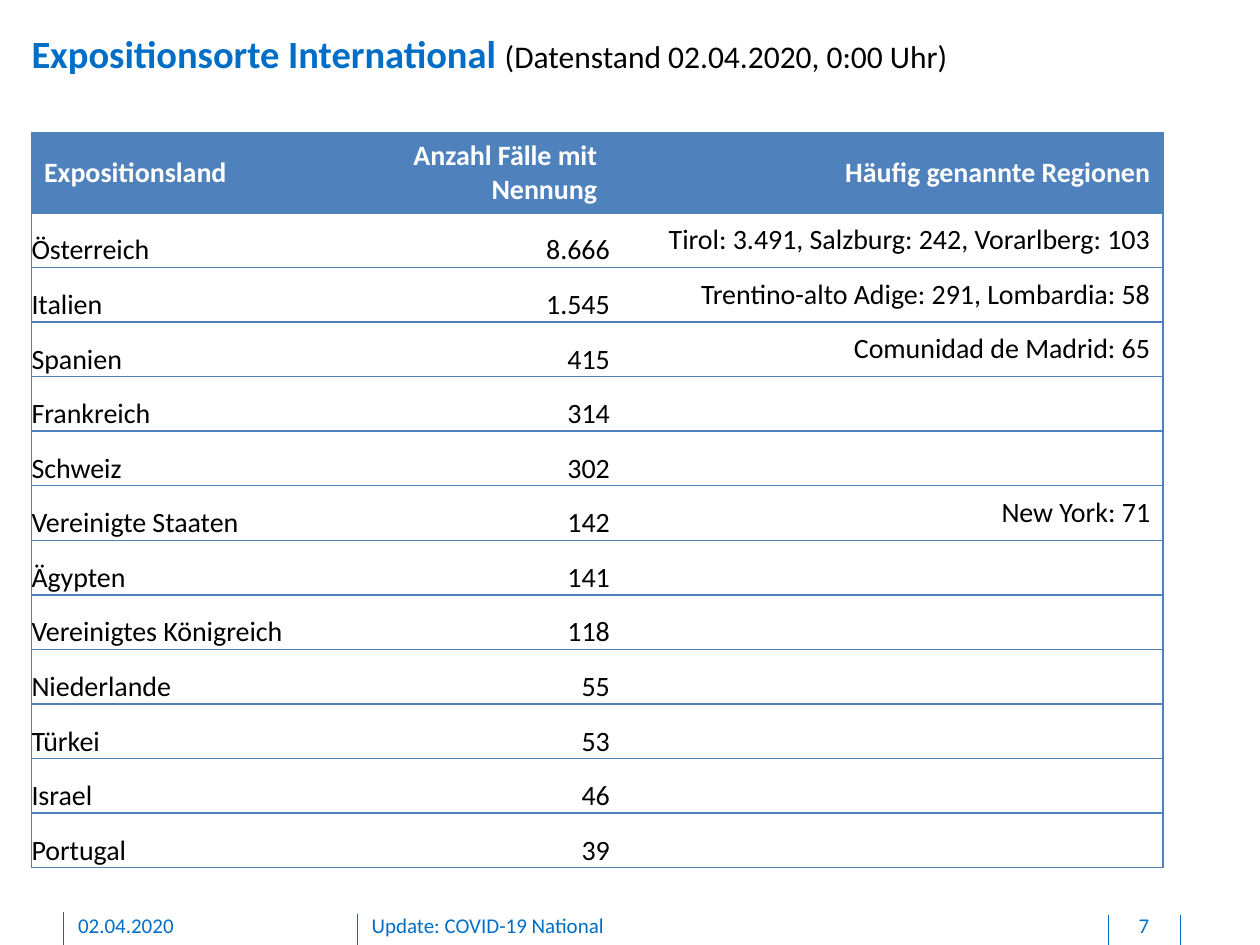
import pptx
import pptx.util
import pptx.dml.color
import pptx.enum.text
import pptx.enum.shapes
import pptx.oxml.ns
from lxml import etree

Inches = pptx.util.Inches
Pt = pptx.util.Pt
RGBColor = pptx.dml.color.RGBColor
ALIGN = pptx.enum.text.PP_ALIGN
ANCHOR = pptx.enum.text.MSO_ANCHOR
qn = pptx.oxml.ns.qn

BLUE = RGBColor(0x00, 0x6E, 0xC7)
TABLE_BLUE = RGBColor(0x4F, 0x81, 0xBD)
BLACK = RGBColor(0, 0, 0)
WHITE = RGBColor(255, 255, 255)

TITLE = "Expositionsorte International "
DATA_STATUS = "(Datenstand 02.04.2020, 0:00 Uhr)"
HEADER = ("Expositionsland", "Anzahl Fälle mit Nennung", "Häufig genannte Regionen")
COUNTRIES = [
    ("Österreich", "8.666", "Tirol: 3.491, Salzburg: 242, Vorarlberg: 103"),
    ("Italien", "1.545", "Trentino-alto Adige: 291, Lombardia: 58"),
    ("Spanien", "415", "Comunidad de Madrid: 65"),
    ("Frankreich", "314", ""),
    ("Schweiz", "302", ""),
    ("Vereinigte Staaten", "142", "New York: 71"),
    ("Ägypten", "141", ""),
    ("Vereinigtes Königreich", "118", ""),
    ("Niederlande", "55", ""),
    ("Türkei", "53", ""),
    ("Israel", "46", ""),
    ("Portugal", "39", ""),
]
FOOTERS = [
    ("02.04.2020", 0.62, 2.03, ALIGN.LEFT),
    ("Update: COVID-19 National", 2.95, 5.67, ALIGN.LEFT),
    ("7", 8.81, 0.54, ALIGN.CENTER),
]
FOOTER_LINES = [(0.5, 7.24), (2.84, 7.25), (8.8, 7.26), (9.37, 7.26)]
COLUMN_WIDTHS = (2.49, 2.1, 4.39)
TABLE_HEIGHT = 5.84
HEADER_HEIGHT = 0.64


def add_text(frame, text, size=16, color=BLACK, bold=False, align=ALIGN.LEFT):
    para = frame.paragraphs[0]
    para.alignment = align
    span = para.add_run()
    span.text = text
    span.font.name = "Calibri"
    span.font.size = Pt(size)
    span.font.bold = bold
    span.font.color.rgb = color


def add_box(page, left, top, width, height, bottom=0):
    frame = page.shapes.add_textbox(
        Inches(left), Inches(top), Inches(width), Inches(height)).text_frame
    frame.word_wrap = True
    frame.margin_left = frame.margin_top = frame.margin_right = 0
    frame.margin_bottom = Inches(bottom)
    return frame


def set_borders(cell, sides):
    properties = cell._tc.get_or_add_tcPr()
    for side in "LRTB":
        line = etree.SubElement(properties, qn(f"a:ln{side}"), w=str(Pt(1)))
        if side in sides:
            fill = etree.SubElement(line, qn("a:solidFill"))
            etree.SubElement(fill, qn("a:srgbClr"), val=str(TABLE_BLUE))
        else:
            etree.SubElement(line, qn("a:noFill"))


def add_country_table(page):
    rows = [HEADER] + COUNTRIES
    table = page.shapes.add_table(
        len(rows), len(HEADER), Inches(0.25), Inches(1.05),
        Inches(sum(COLUMN_WIDTHS)), Inches(TABLE_HEIGHT)).table
    for column, width in zip(table.columns, COLUMN_WIDTHS):
        column.width = Inches(width)
    for index, values in enumerate(rows):
        is_header = index == 0
        body_height = (TABLE_HEIGHT - HEADER_HEIGHT) / len(COUNTRIES)
        table.rows[index].height = Inches(HEADER_HEIGHT if is_header else body_height)
        for position, text in enumerate(values):
            cell = table.cell(index, position)
            set_borders(cell, ("LTB", "TB", "RTB")[position])
            cell.fill.solid()
            cell.fill.fore_color.rgb = TABLE_BLUE if is_header else WHITE
            cell.vertical_anchor = ANCHOR.MIDDLE
            if not is_header and position < 2:
                cell.vertical_anchor = ANCHOR.BOTTOM
                cell.margin_left = cell.margin_right = 0
                cell.margin_top = cell.margin_bottom = 0
            if text:
                add_text(cell.text_frame, text, bold=is_header,
                         color=WHITE if is_header else BLACK,
                         align=ALIGN.RIGHT if position else ALIGN.LEFT)


def add_footer(page):
    for left, top in FOOTER_LINES:
        line = page.shapes.add_connector(
            pptx.enum.shapes.MSO_CONNECTOR.STRAIGHT,
            Inches(left), Inches(top), Inches(left), Inches(7.5))
        line.line.color.rgb = BLUE
        line.line.width = Pt(0.5)
        etree.SubElement(line._element.spPr, qn("a:effectLst"))
    for text, left, width, align in FOOTERS:
        frame = add_box(page, left, 7.24, width, 0.21, bottom=0.05)
        add_text(frame, text, size=12, color=BLUE, align=align)


def main():
    deck = pptx.Presentation()
    deck.slide_width = Inches(10)
    deck.slide_height = Inches(7.5)
    page = deck.slides.add_slide(deck.slide_layouts[6])
    add_footer(page)
    title = add_box(page, 0.25, 0.24, 8.85, 0.37)
    add_text(title, TITLE, size=22, color=BLUE, bold=True)
    add_text(title, DATA_STATUS, size=18)
    add_country_table(page)
    deck.save("out.pptx")


if __name__ == "__main__":
    main()
